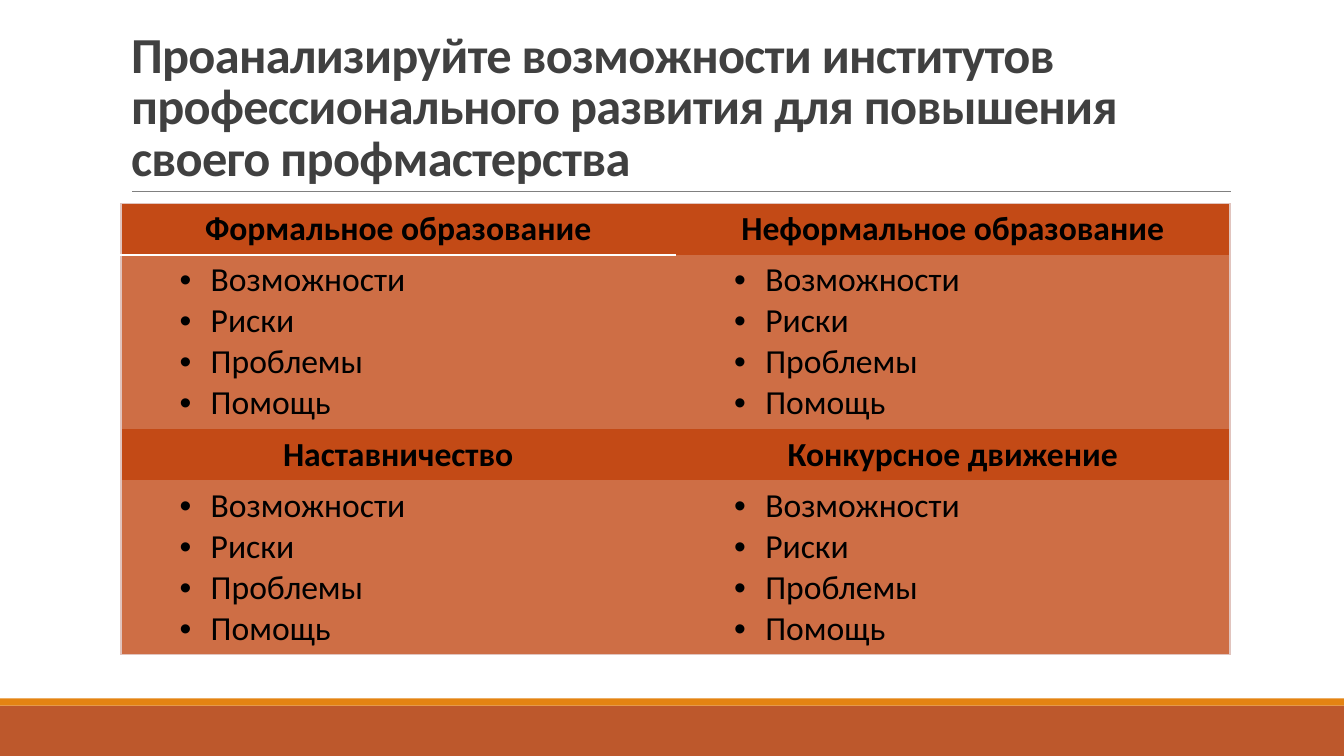
from lxml.etree import SubElement
from pptx import Presentation
from pptx.dml.color import RGBColor
from pptx.enum.shapes import MSO_CONNECTOR, MSO_SHAPE
from pptx.enum.text import MSO_ANCHOR, PP_ALIGN
from pptx.oxml.ns import qn
from pptx.util import Pt

PX = 9144
FONT = "Calibri"
BLACK = RGBColor(0x00, 0x00, 0x00)
WHITE = RGBColor(0xFF, 0xFF, 0xFF)
DARK = RGBColor(0x40, 0x40, 0x40)
GREY = RGBColor(0x80, 0x80, 0x80)
RUST = RGBColor(0xBD, 0x58, 0x2C)
ORANGE = RGBColor(0xE4, 0x83, 0x12)
HEAD = RGBColor(0xC3, 0x4A, 0x16)
BODY = RGBColor(0xCE, 0x6E, 0x45)
EDGE = RGBColor(0xE1, 0xC4, 0xBE)

TITLE = ("Проанализируйте возможности институтов профессионального "
         "развития для повышения своего профмастерства")
SECTIONS = [["Формальное образование", "Неформальное образование"],
            ["Наставничество", "Конкурсное движение"]]
POINTS = ["Возможности", "Риски", "Проблемы", "Помощь"]
HEAD_H, BODY_H = 50, 173


def emu(*lengths):
    """Turn px lengths into EMU."""
    return [n * PX for n in lengths]


def add_run(p, text, size, color, bold):
    """Add one formatted run to a paragraph."""
    r = p.add_run()
    r.text = text
    r.font.name = FONT
    r.font.size = Pt(size)
    r.font.bold = bold
    r.font.color.rgb = color
    return r


def add_bar(s, box, color):
    """Add a plain filled rectangle."""
    sp = s.shapes.add_shape(MSO_SHAPE.RECTANGLE, *emu(*box))
    sp.shadow.inherit = False
    sp.fill.solid()
    sp.fill.fore_color.rgb = color
    sp.line.fill.background()


def add_footer(s, box):
    """Draw the footer band with its thin top stripe."""
    x, y, w, h = box
    stripe = 7
    add_bar(s, (x, y + stripe, w, h - stripe), RUST)
    add_bar(s, (x, y, w, stripe), ORANGE)


def add_title(s, box):
    """Place the title and the rule beneath it."""
    x, y, w, h = box
    line = s.shapes.add_connector(
        MSO_CONNECTOR.STRAIGHT, *emu(x + 11, y + h, x + w + 1, y + h))
    line.line.color.rgb = GREY
    line.line.width = Pt(0.5)
    SubElement(line._element.spPr, qn("a:effectLst"))
    sp = s.shapes.title
    sp.left, sp.top, sp.width, sp.height = emu(*box)
    tf = sp.text_frame
    tf.word_wrap = True
    tf.vertical_anchor = MSO_ANCHOR.BOTTOM
    p = tf.paragraphs[0]
    p.alignment = PP_ALIGN.LEFT
    p.line_spacing = 0.85
    r = add_run(p, TITLE, 36, DARK, True)
    r.font._element.set("spc", "-50")


def set_borders(cell, borders):
    """Set left, right, top and bottom borders; None hides a side."""
    tcPr = cell._tc.get_or_add_tcPr()
    for side, border in zip("LRTB", borders):
        ln = SubElement(tcPr, qn(f"a:ln{side}"))
        if border is None:
            SubElement(ln, qn("a:noFill"))
            continue
        color, width = border
        ln.set("w", str(Pt(width)))
        fill = SubElement(ln, qn("a:solidFill"))
        SubElement(fill, qn("a:srgbClr")).set("val", str(color))


def fill_head(cell, text):
    """Write a centred bold heading."""
    cell.fill.solid()
    cell.fill.fore_color.rgb = HEAD
    p = cell.text_frame.paragraphs[0]
    p.alignment = PP_ALIGN.CENTER
    add_run(p, text, 24, BLACK, True)


def fill_body(cell):
    """Write the bulleted list of points."""
    cell.fill.solid()
    cell.fill.fore_color.rgb = BODY
    tf = cell.text_frame
    for i, text in enumerate(POINTS):
        p = tf.add_paragraph() if i else tf.paragraphs[0]
        pPr = p._p.get_or_add_pPr()
        pPr.set("marL", str(79 * PX))
        pPr.set("indent", str(-31 * PX))
        SubElement(pPr, qn("a:buFont")).set("typeface", "Arial")
        SubElement(pPr, qn("a:buChar")).set("char", "•")
        add_run(p, text, 24, BLACK, False)


def add_sections(s, box):
    """Build the table of headings and bulleted lists."""
    rows, cols = 2 * len(SECTIONS), len(SECTIONS[0])
    table = s.shapes.add_table(rows, cols, *emu(*box)).table
    table.first_row = table.horz_banding = False
    for col in table.columns:
        col.width = box[2] * PX // cols
    edge, rule = (EDGE, 1), (WHITE, 2)
    for i in range(rows):
        is_head = i % 2 == 0
        table.rows[i].height = (HEAD_H if is_head else BODY_H) * PX
        for j in range(cols):
            cell = table.cell(i, j)
            top = edge if i == 0 else rule if (i, j) == (1, 0) else None
            bottom = edge if i == rows - 1 else rule if (i, j) == (0, 0) else None
            set_borders(cell, (edge if j == 0 else None,
                               edge if j == cols - 1 else None, top, bottom))
            if is_head:
                fill_head(cell, SECTIONS[i // 2][j])
            else:
                fill_body(cell)


def main():
    """Build and save the slide."""
    prs = Presentation()
    prs.slide_width, prs.slide_height = emu(1333, 750)
    s = prs.slides.add_slide(prs.slide_layouts[5])
    s.background.fill.solid()
    s.background.fill.fore_color.rgb = WHITE
    add_footer(s, (0, 693, 1333, 57))
    add_title(s, (120, 31, 1100, 159))
    add_sections(s, (120, 202, 1100, 2 * (HEAD_H + BODY_H)))
    prs.save("out.pptx")


if __name__ == "__main__":
    main()
